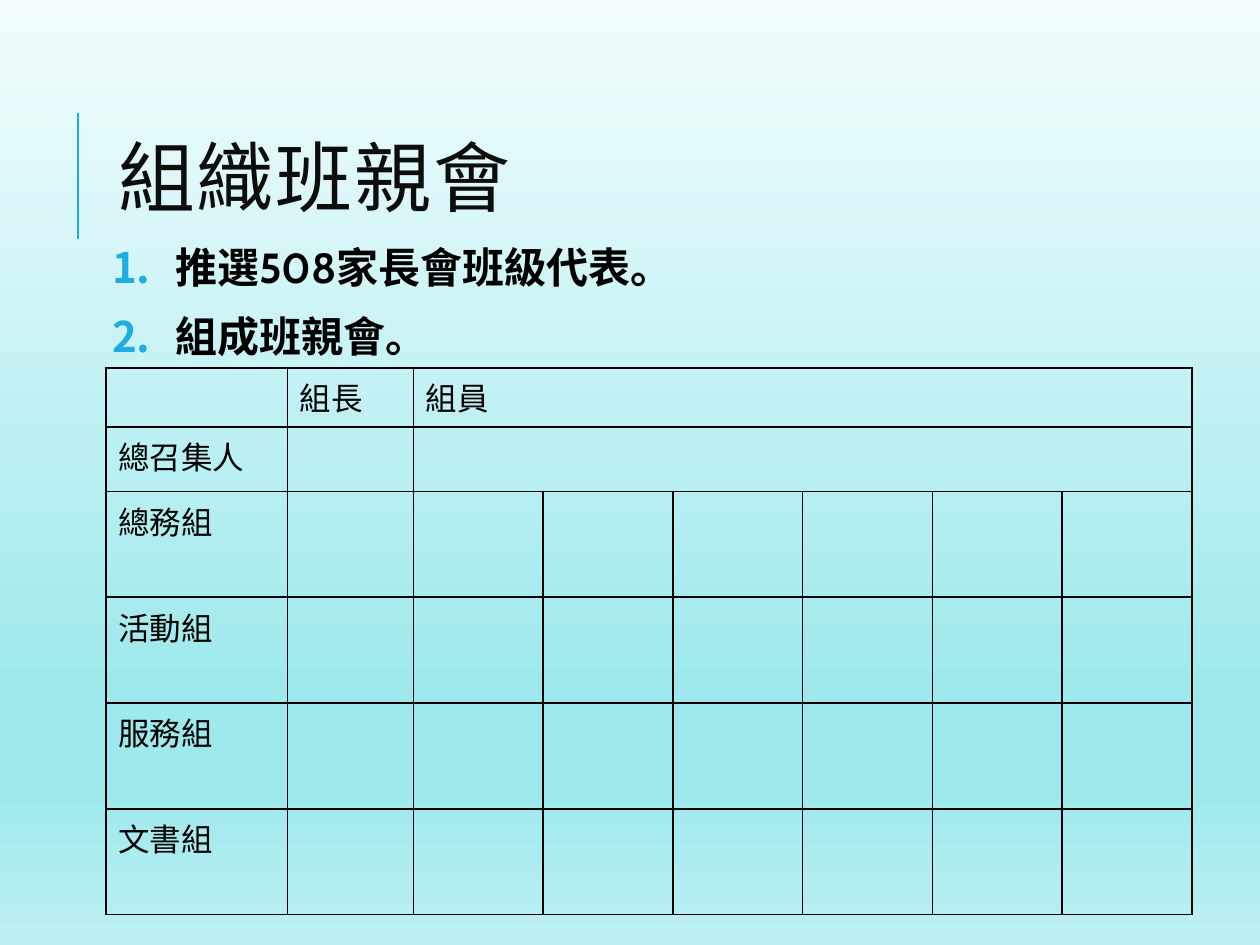
"""Build the class parent association slide with its team roster table."""
from dataclasses import dataclass

from lxml.etree import SubElement
from pptx import Presentation
from pptx.dml.color import RGBColor
from pptx.enum.shapes import MSO_CONNECTOR
from pptx.enum.text import MSO_ANCHOR
from pptx.oxml.ns import qn
from pptx.slide import Slide
from pptx.util import Inches, Pt


@dataclass(frozen=True)
class Theme:
    accent: str = "1CADE4"
    title_color: str = "0D0D0D"
    text_color: str = "000000"
    title_font: str = "Calibri"
    body_font: str = "Cabin"
    title_size: int = 44
    body_size: int = 24
    table_size: int = 18
    background: tuple = ((0, "F4FDFD"), (74, "9DE9ED"), (83, "9DE9ED"), (100, "BEF0F3"))


@dataclass(frozen=True)
class TextStyle:
    font: str
    size: int
    color: str
    bold: bool = False


@dataclass(frozen=True)
class Box:
    left: float
    top: float
    width: float
    height: float

    def lengths(self) -> tuple:
        return tuple(Inches(v) for v in (self.left, self.top, self.width, self.height))


THEME = Theme()
TITLE_STYLE = TextStyle(THEME.title_font, THEME.title_size, THEME.title_color)
BODY_STYLE = TextStyle(THEME.body_font, THEME.body_size, THEME.text_color, True)
TABLE_STYLE = TextStyle(THEME.body_font, THEME.table_size, THEME.text_color)
TASKS = ("推選508家長會班級代表。", "組成班親會。")
HEADINGS = ("", "組長", "組員")
TEAMS = ("總召集人", "總務組", "活動組", "服務組", "文書組")
COLUMN_WIDTHS = (1.44, 1, *[1.03] * 6)
ROW_HEIGHTS = (0.47, 0.51, *[0.84] * 4)
MEMBER_COLUMN = 2
MERGED_ROWS = (0, 1)


def set_attributes(target, values: dict) -> None:
    for name, value in values.items():
        setattr(target, name, value)


def style_font(font, style: TextStyle) -> None:
    set_attributes(font, {"name": style.font, "size": Pt(style.size), "bold": style.bold})
    font.color.rgb = RGBColor.from_string(style.color)


def add_solid_fill(parent, color: str) -> None:
    SubElement(SubElement(parent, qn("a:solidFill")), qn("a:srgbClr"), val=color)


def paint_background(slide: Slide) -> None:
    fill = slide.background.fill
    fill.gradient()
    fill.gradient_angle = 270
    stops = next(slide.element.iter(qn("a:gsLst")))
    for stop in list(stops):
        stops.remove(stop)
    for position, color in THEME.background:
        stop = SubElement(stops, qn("a:gs"), pos=str(position * 1000))
        SubElement(stop, qn("a:srgbClr"), val=color)


def add_accent_line(slide: Slide) -> None:
    x = Inches(0.62)
    line = slide.shapes.add_connector(MSO_CONNECTOR.STRAIGHT, x, Inches(1.9), x, Inches(0.9))
    line.line.color.rgb = RGBColor.from_string(THEME.accent)
    line.line.width = Pt(1.5)
    SubElement(line.element.spPr, qn("a:effectLst"))


def add_text(slide: Slide, box: Box, lines: tuple, style: TextStyle, frame_format: dict,
             paragraph_format: dict) -> list:
    frame = slide.shapes.add_textbox(*box.lengths()).text_frame
    set_attributes(frame, {"word_wrap": True, **frame_format})
    frame.text = "\n".join(lines)
    for paragraph in frame.paragraphs:
        set_attributes(paragraph, paragraph_format)
        style_font(paragraph.runs[0].font, style)
    return list(frame.paragraphs)


def number_paragraph(paragraph) -> None:
    properties = paragraph._p.get_or_add_pPr()
    set_values = {"marL": Inches(0.5), "indent": Inches(-0.5)}
    for name, value in set_values.items():
        properties.set(name, str(value))
    color = SubElement(properties, qn("a:buClr"))
    SubElement(color, qn("a:srgbClr"), val=THEME.accent)
    SubElement(properties, qn("a:buFont"), typeface="+mj-lt")
    SubElement(properties, qn("a:buAutoNum"), type="arabicPeriod")


def format_cell(cell) -> None:
    properties = cell._tc.get_or_add_tcPr()
    for side in ("a:lnL", "a:lnR", "a:lnT", "a:lnB"):
        add_solid_fill(SubElement(properties, qn(side), w=str(Pt(1))), THEME.text_color)
    cell.fill.background()
    paragraph = cell.text_frame.paragraphs[0]
    style_font(paragraph.runs[0].font if paragraph.runs else paragraph.font, TABLE_STYLE)


def add_roster(slide: Slide, box: Box) -> None:
    table = slide.shapes.add_table(
        len(ROW_HEIGHTS), len(COLUMN_WIDTHS), *box.lengths()).table
    set_attributes(table, {"first_row": False, "horz_banding": False})
    for column, width in zip(table.columns, COLUMN_WIDTHS):
        column.width = Inches(width)
    for row, height in zip(table.rows, ROW_HEIGHTS):
        row.height = Inches(height)
    for index, heading in enumerate(HEADINGS):
        table.cell(0, index).text = heading
    for index, team in enumerate(TEAMS, 1):
        table.cell(index, 0).text = team
    for cell in table.iter_cells():
        format_cell(cell)
    for row in MERGED_ROWS:
        table.cell(row, MEMBER_COLUMN).merge(table.cell(row, len(COLUMN_WIDTHS) - 1))


def main() -> None:
    presentation = Presentation()
    set_attributes(presentation, {"slide_width": Inches(10), "slide_height": Inches(7.5)})
    slide = presentation.slides.add_slide(presentation.slide_layouts[6])
    paint_background(slide)
    add_accent_line(slide)
    title = add_text(slide, Box(0.84, 0.64, 7.97, 1.64), ("組織班親會",), TITLE_STYLE,
                     {"vertical_anchor": MSO_ANCHOR.MIDDLE}, {"line_spacing": 0.8})
    title[0].runs[0].font._element.set("spc", "100")
    margins = ("margin_left", "margin_top", "margin_right", "margin_bottom")
    tasks = add_text(slide, Box(0.84, 1.91, 7.97, 4.99), TASKS, BODY_STYLE,
                     dict.fromkeys(margins, Inches(0.05)),
                     {"line_spacing": 0.9, "space_before": Pt(12), "space_after": Pt(2)})
    for paragraph in tasks:
        number_paragraph(paragraph)
    add_roster(slide, Box(0.84, 2.92, sum(COLUMN_WIDTHS), sum(ROW_HEIGHTS)))
    presentation.save("out.pptx")


if __name__ == "__main__":
    main()
